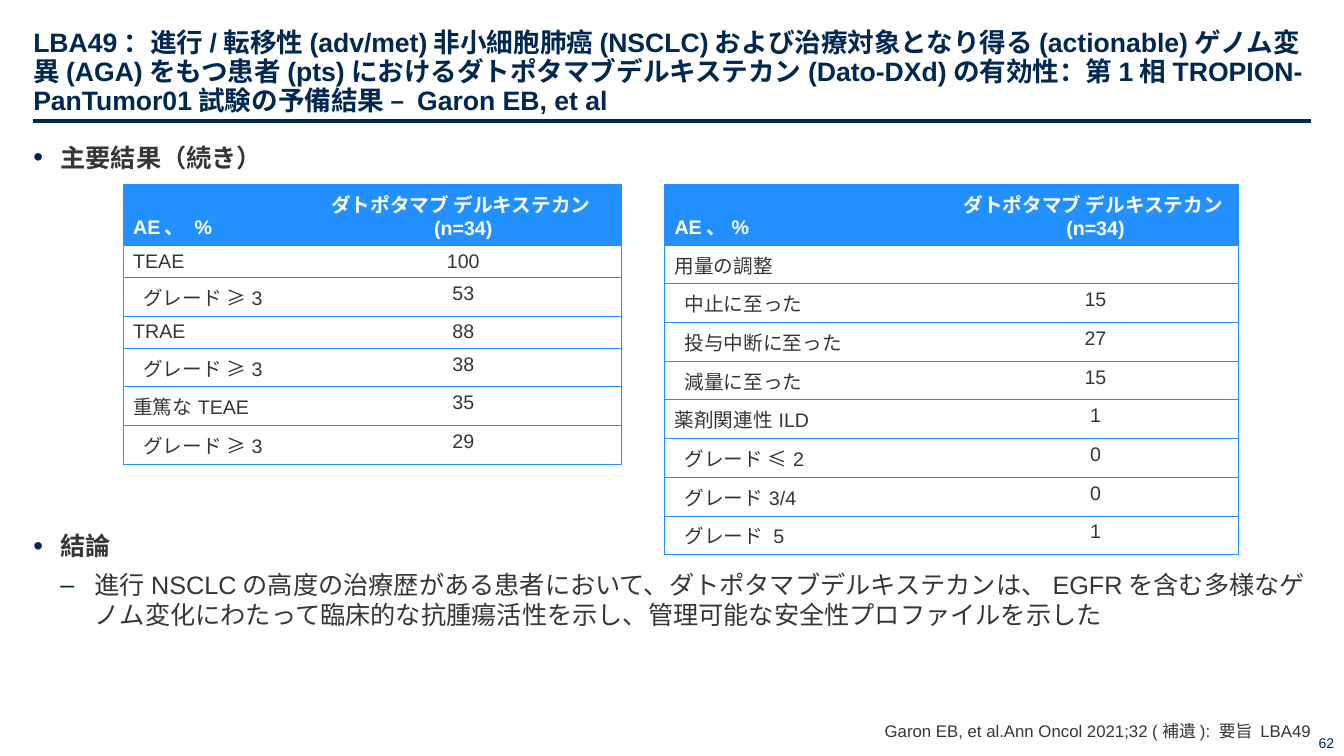
import pptx
import pptx.util
import pptx.oxml.ns
from lxml import etree
from pptx.dml.color import RGBColor
from pptx.enum.shapes import MSO_CONNECTOR
from pptx.enum.text import MSO_ANCHOR, MSO_AUTO_SIZE, PP_ALIGN

# Content
TITLE = ("LBA49：進行/転移性(adv/met)非小細胞肺癌(NSCLC)および治療対象となり得る(actionable)"
         "ゲノム変異(AGA)をもつ患者(pts)におけるダトポタマブデルキステカン(Dato-DXd)の有効性："
         "第1相TROPION-PanTumor01試験の予備結果 – Garon EB, et al")
RESULTS = "主要結果（続き）"
CONCLUSION = "結論"
CONCLUSION_DETAIL = ("進行NSCLCの高度の治療歴がある患者において、ダトポタマブデルキステカンは、"
                     "EGFRを含む多様なゲノム変化にわたって臨床的な抗腫瘍活性を示し、"
                     "管理可能な安全性プロファイルを示した")
SOURCE = "Garon EB, et al.Ann Oncol 2021;32 (補遺): 要旨 LBA49"
PAGE_NUMBER = "62"
DRUG_HEADER = ["ダトポタマブ デルキステカン ", "(n=34)"]

# Rows: label, value, indented
TABLES = [
    {"left": 122, "columns": (181, 313), "header": "AE、 %", "rows": [
        ("TEAE", "100", False), ("グレード ≥3", "53", True),
        ("TRAE", "88", False), ("グレード ≥3", "38", True),
        ("重篤なTEAE", "35", False), ("グレード ≥3", "29", True)]},
    {"left": 659, "columns": (286, 283), "header": "AE、%", "rows": [
        ("用量の調整", "", False), ("中止に至った", "15", True),
        ("投与中断に至った", "27", True), ("減量に至った", "15", True),
        ("薬剤関連性ILD", "1", False), ("グレード ≤2", "0", True),
        ("グレード3/4", "0", True), ("グレード 5", "1", True)]},
]
TABLE_TOP, HEADER_HEIGHT, ROW_HEIGHT = 183, 33, 23

NAVY = RGBColor(0x00, 0x28, 0x50)
GREY = RGBColor(0x36, 0x36, 0x36)
BLUE = RGBColor(0x22, 0x91, 0xFF)
WHITE = RGBColor(0xFF, 0xFF, 0xFF)
FONT = "Arial"
EMU_PER_PX = 9144  # 100 px to the inch


def px(length):
    return pptx.util.Emu(length * EMU_PER_PX)


def add_element(parent, tag, **attributes):
    return etree.SubElement(parent, pptx.oxml.ns.qn(tag), attributes)


def place(shape, left, top, width, height):
    shape.left, shape.top, shape.width, shape.height = map(px, (left, top, width, height))


def set_frame(frame, margins, anchor):
    frame.word_wrap = True
    frame.auto_size = MSO_AUTO_SIZE.NONE
    frame.vertical_anchor = anchor
    (frame.margin_left, frame.margin_top,
     frame.margin_right, frame.margin_bottom) = map(px, margins)


def write(paragraph, text, size=14, color=GREY, bold=False, align=PP_ALIGN.LEFT,
          before=0, after=0, line=1.0, bullet=None, indent=0, hanging=0, level=0):
    paragraph.level = level
    paragraph.alignment = align
    paragraph.space_before = pptx.util.Pt(before)
    paragraph.space_after = pptx.util.Pt(after)
    paragraph.line_spacing = line
    run = paragraph.add_run()
    run.text = text
    run.font.name = FONT
    run.font.size = pptx.util.Pt(size)
    run.font.bold = bold
    run.font.color.rgb = color
    properties = paragraph._p.get_or_add_pPr()
    properties.set("marL", str(px(indent)))
    properties.set("indent", str(px(-hanging)))
    if bullet:
        add_element(add_element(properties, "a:buClr"), "a:srgbClr", val=str(NAVY))
        add_element(properties, "a:buSzPct", val="100000" if level else "110000")
        add_element(properties, "a:buFont", typeface=FONT)
        add_element(properties, "a:buChar", char=bullet)
    else:
        add_element(properties, "a:buNone")


def set_cell(cell, texts, fill, is_first, indented=False, anchor=MSO_ANCHOR.TOP, **text_format):
    # Blue outline on every side except between the two columns
    properties = cell._tc.get_or_add_tcPr()
    for side, visible in (("L", is_first), ("R", not is_first), ("T", True), ("B", True)):
        border = add_element(properties, "a:ln" + side, w=str(pptx.util.Pt(0.75)))
        if visible:
            add_element(add_element(border, "a:solidFill"), "a:srgbClr", val=str(BLUE))
        else:
            add_element(border, "a:noFill")
    cell.fill.solid()
    cell.fill.fore_color.rgb = fill
    cell.vertical_anchor = anchor
    cell.margin_left = px(20 if indented else 10)
    cell.margin_right = px(10)
    cell.margin_top = cell.margin_bottom = px(5)
    for index, text in enumerate(texts):
        frame = cell.text_frame
        paragraph = frame.add_paragraph() if index else frame.paragraphs[0]
        write(paragraph, text, **text_format)


def add_event_table(slide, left, columns, header, rows):
    height = HEADER_HEIGHT + ROW_HEIGHT * len(rows)
    table = slide.shapes.add_table(len(rows) + 1, 2, px(left), px(TABLE_TOP),
                                   px(sum(columns)), px(height)).table
    for column, width in zip(table.columns, columns):
        column.width = px(width)
    for index, row in enumerate(table.rows):
        row.height = px(ROW_HEIGHT if index else HEADER_HEIGHT)
    set_cell(table.cell(0, 0), [header], BLUE, True,
             anchor=MSO_ANCHOR.BOTTOM, color=WHITE, bold=True)
    set_cell(table.cell(0, 1), DRUG_HEADER, BLUE, False,
             color=WHITE, bold=True, align=PP_ALIGN.CENTER)
    for index, (label, value, indented) in enumerate(rows, 1):
        set_cell(table.cell(index, 0), [label], WHITE, True, indented)
        set_cell(table.cell(index, 1), [value], WHITE, False, align=PP_ALIGN.CENTER)


def main():
    presentation = pptx.Presentation()
    presentation.slide_width, presentation.slide_height = px(1333), px(750)
    slide = presentation.slides.add_slide(presentation.slide_layouts[3])
    title, body, source = slide.placeholders

    # Title and its rule
    place(title, 33, 12, 1267, 103)
    set_frame(title.text_frame, (0, 5, 0, 0), MSO_ANCHOR.BOTTOM)
    write(title.text_frame.paragraphs[0], TITLE, size=19, color=NAVY, bold=True, line=0.9)
    rule = slide.shapes.add_connector(MSO_CONNECTOR.STRAIGHT,
                                      px(33), px(120), px(1300), px(120))
    rule.line.color.rgb = NAVY
    rule.line.width = pptx.util.Pt(2.25)
    add_element(rule._element.spPr, "a:effectLst")

    # Results and conclusion
    place(body, 33, 136, 1267, 553)
    frame = body.text_frame
    set_frame(frame, (0, 5, 0, 5), MSO_ANCHOR.TOP)
    heading = {"size": 18, "bold": True, "after": 6, "bullet": "•", "indent": 27, "hanging": 27}
    write(frame.paragraphs[0], RESULTS, **heading)
    write(frame.add_paragraph(), CONCLUSION, before=250, **heading)
    write(frame.add_paragraph(), CONCLUSION_DETAIL, size=18, after=6,
          bullet="–", indent=61, hanging=34, level=1)

    # Source and page number
    place(source, 698, 713, 602, 22)
    set_frame(source.text_frame, (0, 0, 0, 0), MSO_ANCHOR.BOTTOM)
    write(source.text_frame.paragraphs[0], SOURCE, size=12, align=PP_ALIGN.RIGHT, before=6)
    number = slide.shapes.add_textbox(px(1268), px(710), px(65), px(40))
    set_frame(number.text_frame, (10, 5, 10, 5), MSO_ANCHOR.BOTTOM)
    write(number.text_frame.paragraphs[0], PAGE_NUMBER, size=10, color=NAVY,
          align=PP_ALIGN.RIGHT)

    # Adverse event tables
    for event_table in TABLES:
        add_event_table(slide, **event_table)

    presentation.save("out.pptx")


if __name__ == "__main__":
    main()
